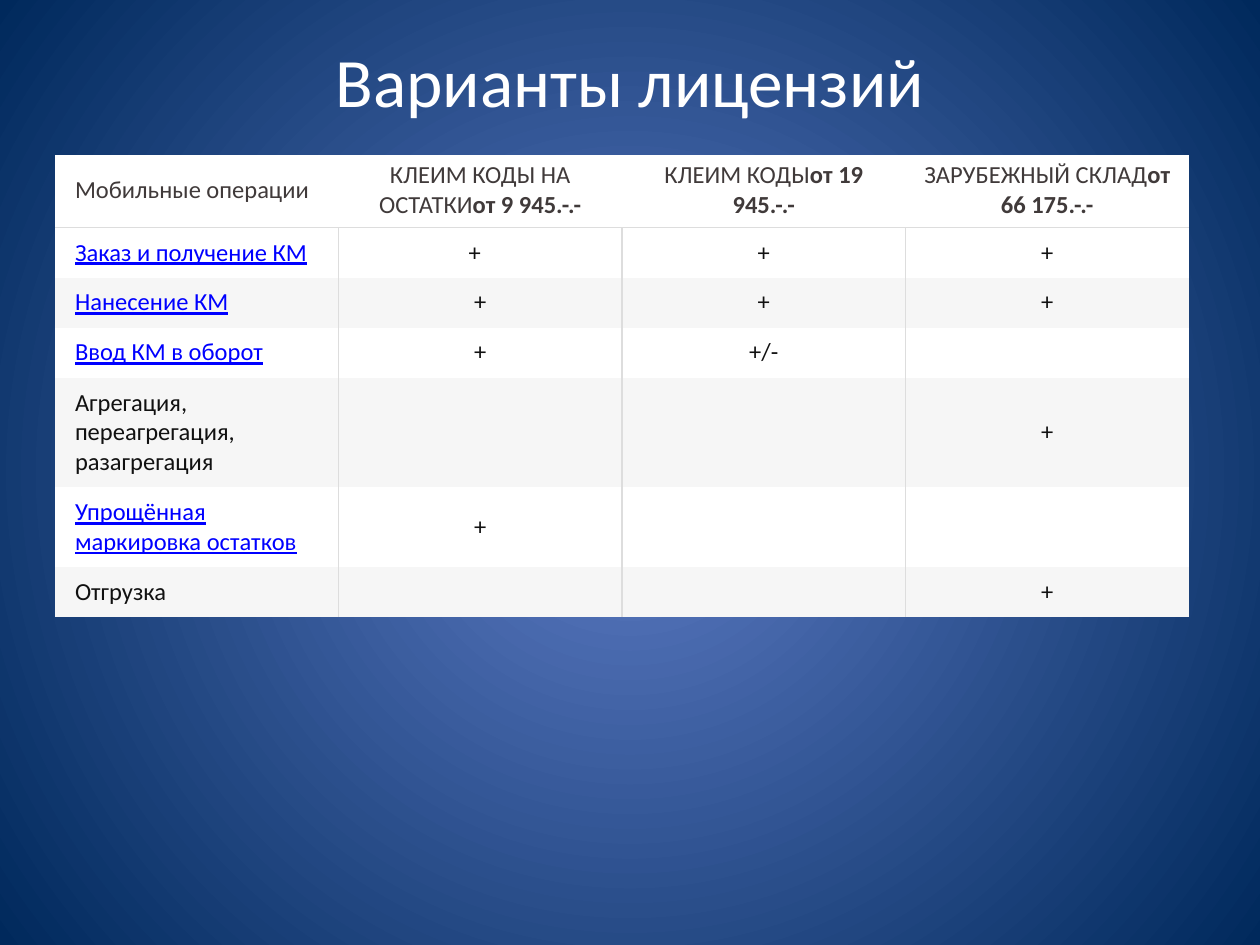
from dataclasses import dataclass

from lxml import etree
from pptx import Presentation
from pptx import util as u
from pptx.dml.color import RGBColor
from pptx.enum import text
from pptx.oxml import ns

PX = 914400 / 126


@dataclass(frozen=True)
class Theme:
    font: str = "Calibri"
    title_size: float = 39.6
    cell_size: float = 14
    title: str = "FFFFFF"
    header: str = "403A3A"
    body: str = "111111"
    link: str = "0000FF"
    border: str = "DDDDDD"
    border_width: float = 0.75
    bands: tuple = ("FFFFFF", "F6F6F6")
    glow: tuple = ("5E7CC5", "00295C")


def px(length):
    return u.Emu(round(length * PX))


class SlideBuilder:
    def __init__(self, deck, theme):
        self.theme = theme
        self.slide = deck.slides.add_slide(deck.slide_layouts[5])

    def style(self, font, size, color):
        font.name = self.theme.font
        font.size = u.Pt(size)
        font.color.rgb = RGBColor.from_string(color)

    def background(self):
        fill = self.slide.background.fill
        fill.gradient()
        for stop, color in zip(fill.gradient_stops, self.theme.glow):
            stop.color.rgb = RGBColor.from_string(color)
        linear = self.slide.element.find(".//" + ns.qn("a:lin"))
        circle = etree.Element(ns.qn("a:path"), path="circle")
        etree.SubElement(circle, ns.qn("a:fillToRect"),
                         l="50000", t="50000", r="50000", b="50000")
        linear.getparent().replace(linear, circle)

    def title(self, wording, left, top, width, height):
        box = self.slide.shapes.title
        box.left, box.top, box.width, box.height = map(px, (left, top, width, height))
        frame = box.text_frame
        frame.text = wording
        frame.margin_top = 0
        frame.vertical_anchor = text.MSO_ANCHOR.TOP
        para = frame.paragraphs[0]
        para.alignment = text.PP_ALIGN.CENTER
        self.style(para.font, self.theme.title_size, self.theme.title)

    def borders(self, cell, visible):
        properties = cell._tc.get_or_add_tcPr()
        for index, side in enumerate("LRTB"):
            line = etree.Element(ns.qn("a:ln" + side), w=str(u.Pt(self.theme.border_width)))
            if side in visible:
                fill = etree.SubElement(line, ns.qn("a:solidFill"))
                etree.SubElement(fill, ns.qn("a:srgbClr"), val=self.theme.border)
            else:
                etree.SubElement(line, ns.qn("a:noFill"))
            properties.insert(index, line)

    def cell(self, cell, spans, color, band, margins, align):
        cell.fill.solid()
        cell.fill.fore_color.rgb = RGBColor.from_string(band)
        cell.vertical_anchor = text.MSO_ANCHOR.MIDDLE
        cell.margin_left, cell.margin_top, cell.margin_right, cell.margin_bottom = map(px, margins)
        para = cell.text_frame.paragraphs[0]
        para.alignment = align
        self.style(para.font, self.theme.cell_size, color)
        para.font.underline = color == self.theme.link
        for index, wording in enumerate(spans):
            span = para.add_run()
            span.text = wording
            span.font.bold = index > 0

    def table(self, header, rows, linked, heights, left, top, width):
        theme = self.theme
        frame = self.slide.shapes.add_table(len(heights), len(header), px(left), px(top),
                                            px(width), px(sum(heights)))
        table = frame.table
        table.first_row = table.horz_banding = False
        last = len(header) - 1
        for r, (height, row) in enumerate(zip(heights, [header, *rows])):
            table.rows[r].height = px(height)
            band = theme.bands[0] if r == 0 else theme.bands[(r - 1) % 2]
            for c, wording in enumerate(row):
                if r == 0:
                    spans, color, pads, visible = wording, theme.header, (5, 8), "B"
                else:
                    spans = (wording,) if wording else ()
                    color = theme.link if c == 0 and wording in linked else theme.body
                    pads = (10, 10) if wording else (0, 0)
                    visible = ("L" if c else "") + ("R" if c < last else "") + ("T" if r == 1 else "")
                align = text.PP_ALIGN.CENTER if c else text.PP_ALIGN.LEFT
                margins = (10 if c else 20, pads[0], 10, pads[1])
                cell = table.cell(r, c)
                self.cell(cell, spans, color, band, margins, align)
                self.borders(cell, visible)
        return table


HEADER = [
    ("Мобильные операции",),
    ("КЛЕИМ КОДЫ НА ОСТАТКИ", "от 9 945.-.-"),
    ("КЛЕИМ КОДЫ", "от 19 945.-.-"),
    ("ЗАРУБЕЖНЫЙ СКЛАД", "от 66 175.-.-"),
]
ROWS = [
    ("Заказ и получение КМ", "+", "+", "+"),
    ("Нанесение КМ", "+", "+", "+"),
    ("Ввод КМ в оборот", "+", "+/-", ""),
    ("Агрегация, переагрегация, разагрегация", "", "", "+"),
    ("Упрощённая маркировка остатков", "+", "", ""),
    ("Отгрузка", "", "", "+"),
]
LINKED = {ROWS[index][0] for index in (0, 1, 2, 4)}
HEIGHTS = [72, 50, 50, 50, 110, 79, 50]


def main():
    deck = Presentation()
    deck.slide_width, deck.slide_height = px(1260), px(945)
    builder = SlideBuilder(deck, Theme())
    builder.background()
    builder.title("Варианты лицензий", 63, 38, 1134, 158)
    licences = builder.table(HEADER, ROWS, LINKED, HEIGHTS, 55, 155, 1134)
    licences.cell(1, 1).margin_right = px(21)
    deck.save("out.pptx")


if __name__ == "__main__":
    main()
